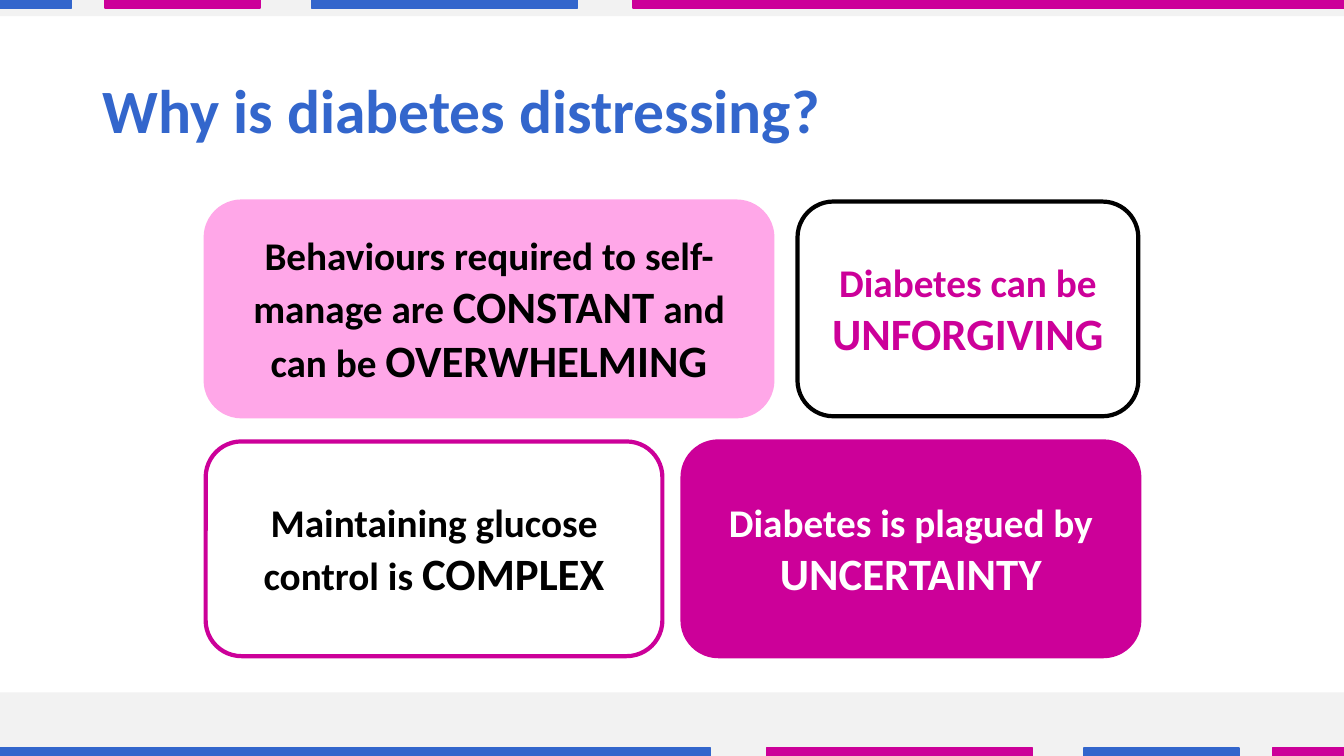
"""Build the slide on why diabetes is distressing."""
from dataclasses import dataclass
from typing import Optional

from pptx import Presentation
from pptx.dml.color import RGBColor
from pptx.enum.shapes import MSO_SHAPE as SHAPE
from pptx.enum.text import MSO_ANCHOR as ANCHOR, PP_ALIGN as ALIGN
from pptx.util import Inches, Pt

WIDTH, HEIGHT = 13.33, 7.5
BAR_HEIGHT = 0.08
BOX_HEIGHT = 2.13
ROW_TOPS = (2, 4.38)

BLUE = RGBColor(0x33, 0x66, 0xCC)
MAGENTA = RGBColor(0xCC, 0x00, 0x99)
PINK = RGBColor(0xFF, 0xA7, 0xE8)
GREY = RGBColor(0xF2, 0xF2, 0xF2)
BLACK = RGBColor(0x00, 0x00, 0x00)
WHITE = RGBColor(0xFF, 0xFF, 0xFF)


@dataclass
class Bar:
    left: float
    width: float
    color: RGBColor
    mirrored: RGBColor


@dataclass
class Box:
    row: int
    left: float
    width: float
    fill: Optional[RGBColor]
    line: RGBColor
    color: RGBColor
    phrases: tuple[str, ...]


BARS = (
    Bar(0, 7.05, BLUE, MAGENTA),
    Bar(7.6, 2.64, MAGENTA, BLUE),
    Bar(10.75, 1.54, BLUE, MAGENTA),
    Bar(12.62, 0.71, MAGENTA, BLUE),
)
BOXES = (
    Box(0, 2.04, 5.62, PINK, PINK, BLACK,
        ("Behaviours required to self-manage are ", "CONSTANT", " and can be ", "OVERWHELMING")),
    Box(0, 7.91, 3.38, None, BLACK, MAGENTA, ("Diabetes can be ", "UNFORGIVING")),
    Box(1, 2.04, 4.53, None, MAGENTA, BLACK, ("Maintaining glucose control is ", "COMPLEX")),
    Box(1, 6.77, 4.53, MAGENTA, MAGENTA, WHITE, ("Diabetes is plagued by ", "UNCERTAINTY")),
)


def add_block(s, kind: SHAPE, left: float, top: float, width: float, height: float,
              fill: Optional[RGBColor], line: Optional[RGBColor] = None, weight: float = 1):
    """Add a flat preset shape with an optional fill and outline."""
    sp = s.shapes.add_shape(kind, Inches(left), Inches(top), Inches(width), Inches(height))
    sp.shadow.inherit = False
    if fill is None:
        sp.fill.background()
    else:
        sp.fill.solid()
        sp.fill.fore_color.rgb = fill
    if line is None:
        sp.line.fill.background()
    else:
        sp.line.color.rgb = line
        sp.line.width = Pt(weight)
    return sp


def add_run(p, text: str, size: float, color: RGBColor) -> None:
    """Append a bold run to a paragraph."""
    r = p.add_run()
    r.text = text
    for name, value in {"name": "Calibri", "size": Pt(size), "bold": True}.items():
        setattr(r.font, name, value)
    r.font.color.rgb = color


def first_paragraph(sp):
    """Set wrapping and middle anchoring, and return the first paragraph."""
    tf = sp.text_frame
    for name, value in {"word_wrap": True, "vertical_anchor": ANCHOR.MIDDLE}.items():
        setattr(tf, name, value)
    return tf.paragraphs[0]


def add_borders(s) -> None:
    """Draw the grey bands and the bars, with the top row mirroring the bottom."""
    add_block(s, SHAPE.RECTANGLE, 0, 6.87, WIDTH, 0.63, GREY)
    add_block(s, SHAPE.RECTANGLE, 0, 0, WIDTH, 0.16, GREY)
    for bar in BARS:
        add_block(s, SHAPE.RECTANGLE, bar.left, HEIGHT - BAR_HEIGHT, bar.width, BAR_HEIGHT,
                  bar.color, bar.color)
        add_block(s, SHAPE.RECTANGLE, WIDTH - bar.left - bar.width, 0, bar.width, BAR_HEIGHT,
                  bar.mirrored, bar.mirrored)


def add_title(s, text: str) -> None:
    """Add the slide heading."""
    p = first_paragraph(s.shapes.add_textbox(Inches(0.92), Inches(0.4), Inches(11.5), Inches(1.45)))
    p.line_spacing = 0.9
    add_run(p, text, 44, BLUE)


def add_box(s, box: Box) -> None:
    """Add a rounded box whose every second phrase is a larger keyword."""
    sp = add_block(s, SHAPE.ROUNDED_RECTANGLE, box.left, ROW_TOPS[box.row], box.width,
                   BOX_HEIGHT, box.fill, box.line, 3)
    p = first_paragraph(sp)
    p.alignment = ALIGN.CENTER
    for i, phrase in enumerate(box.phrases):
        add_run(p, phrase, 32 if i % 2 else 28, box.color)


def main() -> None:
    """Build and save the presentation."""
    prs = Presentation()
    prs.slide_width, prs.slide_height = Inches(WIDTH), Inches(HEIGHT)
    s = prs.slides.add_slide(prs.slide_layouts[6])
    add_borders(s)
    add_title(s, "Why is diabetes distressing?")
    for box in BOXES:
        add_box(s, box)
    prs.save("out.pptx")


if __name__ == "__main__":
    main()
